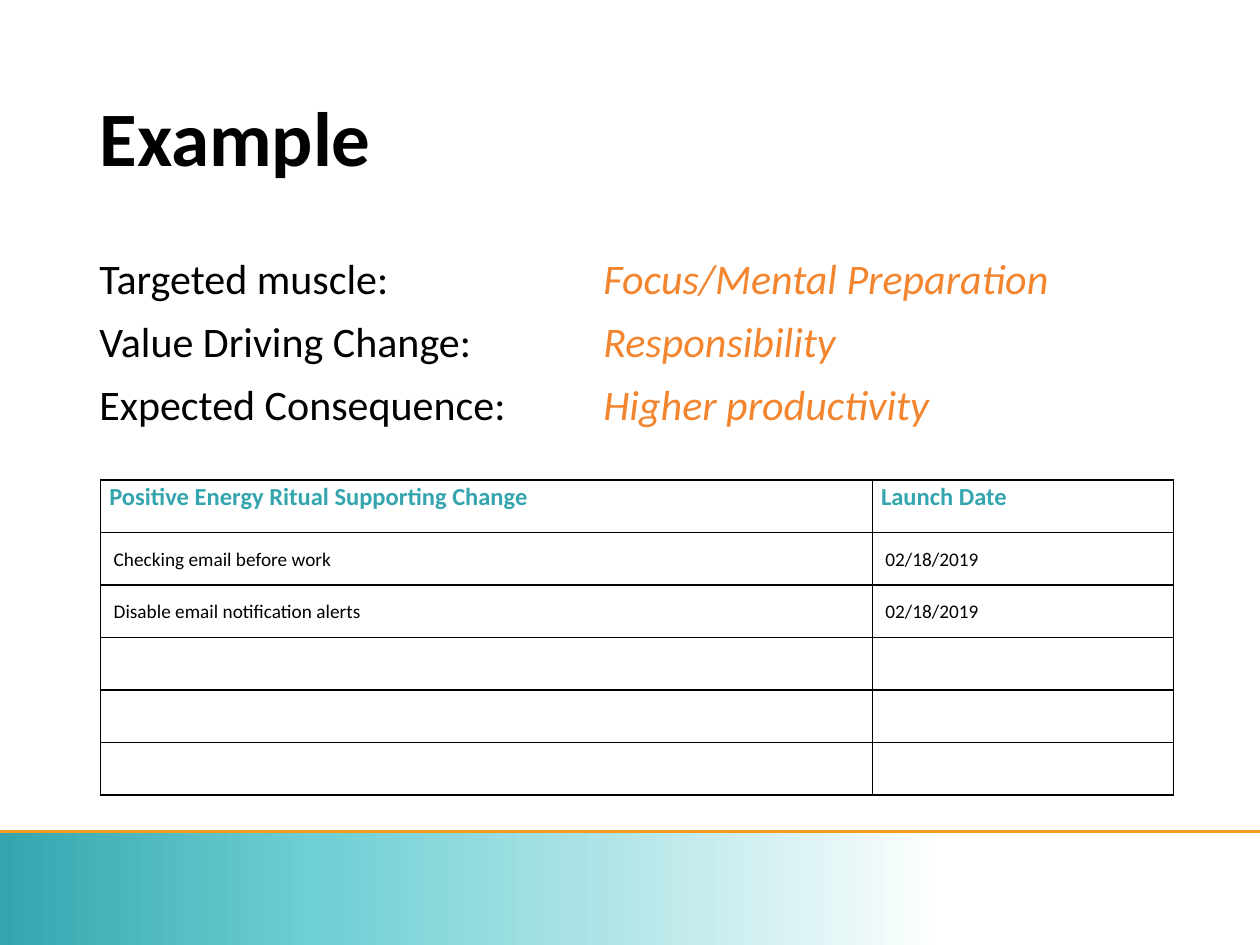
from dataclasses import dataclass

from lxml import etree
from pptx import Presentation
from pptx import util as u
from pptx.dml import color
from pptx.enum import shapes, text
from pptx.oxml import ns

Pt = u.Pt
FONT = "Calibri"
BLACK, TEAL, ORANGE, GOLD = "000000", "34A5AE", "F3852F", "F19D19"
MARGIN, WIDTH = 49.7, 620.6
BAND_TOP = 475
TAB_STOP = 288
ROW_HEIGHT = 30
COLUMN_WIDTHS = (441, 172)
BAND_STOPS = ((0, TEAL), (25, "6ECFD4"), (46, "A9E2E5"), (75, "FFFFFF"), (100, "FFFFFF"))


@dataclass
class Fact:
    label: str
    answer: str


@dataclass
class Ritual:
    action: str = ""
    launch: str = ""


FACTS = [
    Fact("Targeted muscle:", "Focus/Mental Preparation"),
    Fact("Value Driving Change:", "Responsibility"),
    Fact("Expected Consequence:", "Higher productivity"),
]
RITUALS = [
    Ritual("Positive Energy Ritual Supporting Change", "Launch Date"),
    Ritual(" Checking email before work", " 02/18/2019"),
    Ritual(" Disable email notification alerts", " 02/18/2019"),
    Ritual(),
    Ritual(),
    Ritual(),
]


def rgb(value: str) -> color.RGBColor:
    return color.RGBColor.from_string(value)


def apply(target, formats: dict) -> None:
    for name, value in formats.items():
        setattr(target, name, value)


def child(parent, tag: str, **attributes):
    return etree.SubElement(parent, ns.qn(tag), attributes)


def add_run(p, words: str, size: float, fill: str, **formats) -> None:
    r = p.add_run()
    r.text = words
    apply(r.font, {"name": FONT, "size": Pt(size), **formats})
    r.font.color.rgb = rgb(fill)


def draw_band(s) -> None:
    sp = s.shapes.add_shape(shapes.MSO_SHAPE.RECTANGLE, 0, Pt(BAND_TOP), Pt(720), Pt(540 - BAND_TOP))
    sp.shadow.inherit = False
    sp.line.fill.background()
    sp.fill.gradient()
    sp.fill.gradient_angle = 0
    stops = sp.fill._fill._gradFill.find(ns.qn("a:gsLst"))
    for stop in list(stops):
        stops.remove(stop)
    for position, value in BAND_STOPS:
        stop = child(stops, "a:gs", pos=str(position * 1000))
        child(stop, "a:srgbClr", val=value)
    line = s.shapes.add_connector(shapes.MSO_CONNECTOR.STRAIGHT, 0, Pt(BAND_TOP), Pt(720), Pt(BAND_TOP))
    line.line.color.rgb = rgb(GOLD)
    line.line.width = Pt(1.5)
    child(line._element.spPr, "a:effectLst")


def draw_title(s, words: str) -> None:
    sp = s.shapes.title
    apply(sp, {"left": Pt(MARGIN), "top": Pt(28.8), "width": Pt(WIDTH), "height": Pt(104.4)})
    sp.text_frame.vertical_anchor = text.MSO_ANCHOR.MIDDLE
    p = sp.text_frame.paragraphs[0]
    apply(p, {"alignment": text.PP_ALIGN.LEFT, "line_spacing": 0.9})
    add_run(p, words, 44, BLACK, bold=True)


def draw_facts(s, facts: list[Fact]) -> None:
    sp = s.shapes.add_textbox(Pt(MARGIN), Pt(144), Pt(WIDTH), Pt(110))
    tf = sp.text_frame
    tf.word_wrap = True
    for i, fact in enumerate(facts):
        p = tf.add_paragraph() if i else tf.paragraphs[0]
        apply(p, {"line_spacing": 0.9, "space_before": Pt(10 if i else 0)})
        tabs = child(p._p.get_or_add_pPr(), "a:tabLst")
        child(tabs, "a:tab", pos=str(Pt(TAB_STOP)), algn="l")
        add_run(p, fact.label + "\t", 24, BLACK)
        add_run(p, fact.answer, 24, ORANGE, italic=True)


def format_cell(cell, words: str, header: bool) -> None:
    anchor = text.MSO_ANCHOR.TOP if header else text.MSO_ANCHOR.MIDDLE
    apply(cell, {"margin_left": Pt(5), "margin_right": Pt(5), "margin_top": 0,
                 "margin_bottom": 0, "vertical_anchor": anchor})
    for side in ("a:lnL", "a:lnR", "a:lnT", "a:lnB"):
        border = child(cell._tc.get_or_add_tcPr(), side, w=str(Pt(1)))
        child(child(border, "a:solidFill"), "a:srgbClr", val=BLACK)
    cell.fill.background()
    p = cell.text_frame.paragraphs[0]
    p.line_spacing = 1.07
    if words:
        add_run(p, words, 14 if header else 11, TEAL if header else BLACK, bold=header)


def draw_rituals(s, rituals: list[Ritual]) -> None:
    frame = s.shapes.add_table(len(rituals), len(COLUMN_WIDTHS), Pt(57.5), Pt(274.3),
                               Pt(sum(COLUMN_WIDTHS)), Pt(ROW_HEIGHT * len(rituals)))
    table = frame.table
    apply(table, {"first_row": False, "horz_banding": False})
    for column, width in zip(table.columns, COLUMN_WIDTHS):
        column.width = Pt(width)
    for i, ritual in enumerate(rituals):
        table.rows[i].height = Pt(ROW_HEIGHT)
        for j, words in enumerate((ritual.action, ritual.launch)):
            format_cell(table.cell(i, j), words, header=i == 0)


def main() -> None:
    prs = Presentation()
    apply(prs, {"slide_width": Pt(720), "slide_height": Pt(540)})
    s = prs.slides.add_slide(prs.slide_layouts[5])
    draw_band(s)
    draw_title(s, "Example")
    draw_facts(s, FACTS)
    draw_rituals(s, RITUALS)
    prs.save("out.pptx")


if __name__ == "__main__":
    main()
